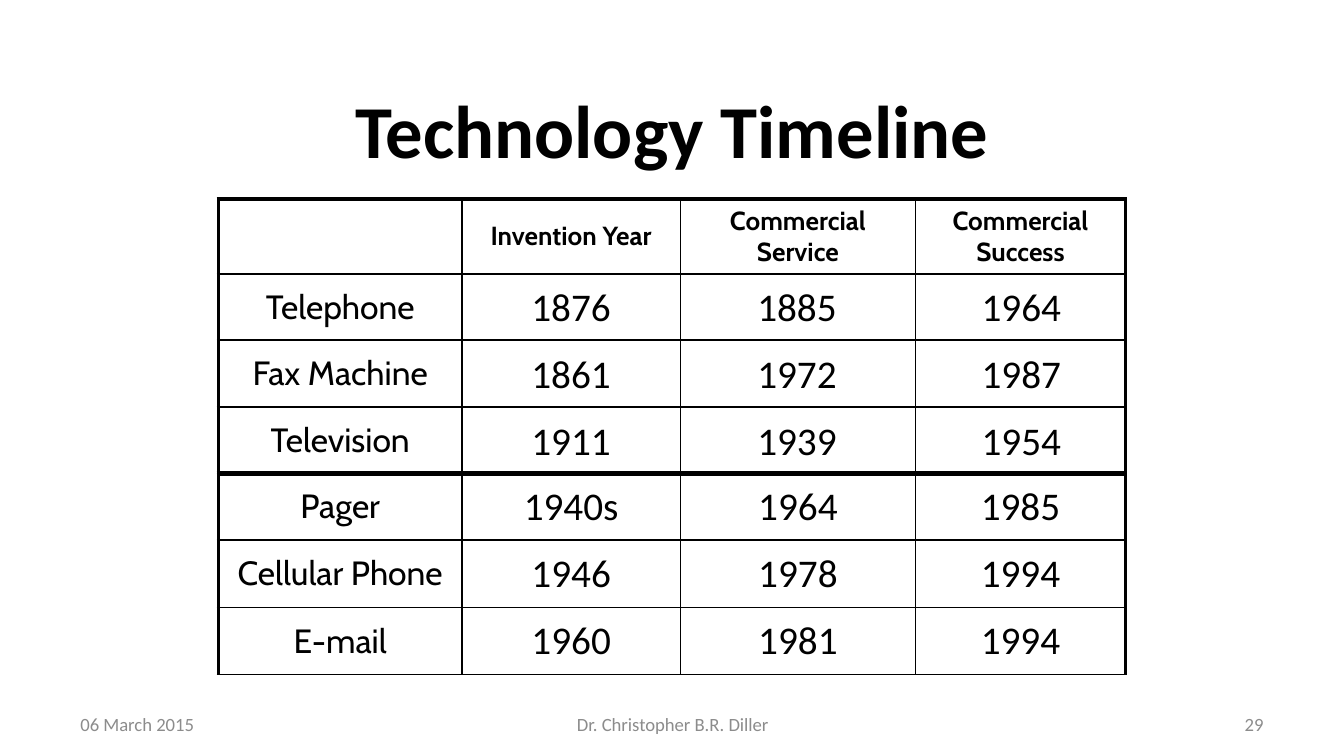
import pptx
import pptx.dml.color
import pptx.enum.text
import pptx.oxml.ns
import pptx.util
from lxml import etree
from pptx.util import Inches

ALIGN = pptx.enum.text.PP_ALIGN
ANCHOR = pptx.enum.text.MSO_ANCHOR
BLACK = "000000"
GRAY = "8C8C8C"
THIN, THICK = 1, 2.25
COLUMN_WIDTHS = [sixteenths / 16 for sixteenths in (29, 26, 28, 25)]
TABLE_LEFT = 26 / 16

HEADINGS = ["", "Invention Year", "Commercial\nService", "Commercial\nSuccess"]
EARLY = [
    ("Telephone", ["1876", "1885", "1964"]),
    ("Fax Machine", ["1861", "1972", "1987"]),
    ("Television", ["1911", "1939", "1954"]),
]
LATE = [
    ("Pager", ["1940s", "1964", "1985"]),
    ("Cellular Phone", ["1946", "1978", "1994"]),
    ("E-mail", ["1960", "1981", "1994"]),
]
YEAR_BOXES = [(3.5, 1.5), (5.12, 1.62), (6.88, 1.44)]

HEADING_FORMAT = dict(size=14, font="Cabin", bold=True)
LABEL_FORMAT = dict(size=18, font="Cabin")
YEAR_FORMAT = dict(size=21)


def rgb(color):
    return pptx.dml.color.RGBColor.from_string(color)


def write_text(frame, text, size=18, font="Calibri", color=BLACK, bold=False,
               align=ALIGN.CENTER):
    """Fill a text frame, one paragraph per line of text."""
    frame.text = text
    for paragraph in frame.paragraphs:
        paragraph.alignment = align
        paragraph.font.size = pptx.util.Pt(size)
        paragraph.font.name = font
        paragraph.font.bold = bold
        paragraph.font.color.rgb = rgb(color)


def set_borders(cell, **widths):
    """Draw the cell's borders; widths in points, keyed L, R, T, B in that order."""
    properties = cell._tc.get_or_add_tcPr()
    name = pptx.oxml.ns.qn
    for side, width in widths.items():
        line = etree.SubElement(properties, name(f"a:ln{side}"),
                                w=str(pptx.util.Pt(width)))
        fill = etree.SubElement(line, name("a:solidFill"))
        etree.SubElement(fill, name("a:srgbClr"), val=BLACK)


class SlideBuilder:
    def __init__(self, slide):
        self.slide = slide

    def text(self, left, top, width, height, text, anchor=ANCHOR.MIDDLE, **style):
        shape = self.slide.shapes.add_textbox(
            Inches(left), Inches(top), Inches(width), Inches(height))
        frame = shape.text_frame
        frame.word_wrap = True
        frame.vertical_anchor = anchor
        write_text(frame, text, **style)

    def table(self, top, row_heights, rows, bottom_width):
        """Add a table; each row is a list of (text, format) pairs."""
        shape = self.slide.shapes.add_table(
            len(rows), len(COLUMN_WIDTHS), Inches(TABLE_LEFT), Inches(top),
            Inches(sum(COLUMN_WIDTHS)), Inches(sum(row_heights)))
        table = shape.table
        table.first_row = table.horz_banding = False
        for column, width in zip(table.columns, COLUMN_WIDTHS):
            column.width = Inches(width)
        last_row, last_column = len(rows) - 1, len(COLUMN_WIDTHS) - 1
        for i, (row, height) in enumerate(zip(rows, row_heights)):
            table.rows[i].height = Inches(height)
            for j, (text, style) in enumerate(row):
                cell = table.cell(i, j)
                cell.margin_left = cell.margin_right = Inches(0.07)
                cell.margin_top = cell.margin_bottom = Inches(0.04)
                cell.vertical_anchor = ANCHOR.MIDDLE
                write_text(cell.text_frame, text, **style)
                set_borders(cell,
                            L=THICK if j == 0 else THIN,
                            R=THICK if j == last_column else THIN,
                            T=THICK if i == 0 else THIN,
                            B=bottom_width if i == last_row else THIN)
                cell.fill.background()


def main():
    presentation = pptx.Presentation()
    presentation.slide_width = Inches(10)
    presentation.slide_height = Inches(10 * 9 / 16)
    builder = SlideBuilder(
        presentation.slides.add_slide(presentation.slide_layouts[6]))

    builder.text(0.5, 0.6, 9, 0.71, "Technology Timeline", size=40, bold=True)

    early_rows = [[(heading, HEADING_FORMAT) for heading in HEADINGS]]
    early_rows += [[(label, LABEL_FORMAT)] + [("", LABEL_FORMAT)] * 3
                   for label, _ in EARLY]
    builder.table(1.48, [0.56, 0.49, 0.5, 0.5], early_rows, THICK)

    late_rows = [[(label, LABEL_FORMAT)] + [(year, YEAR_FORMAT) for year in years]
                 for label, years in LATE]
    builder.table(3.52, [0.5] * 3, late_rows, THIN)

    for i, (_, years) in enumerate(EARLY):
        for (left, width), year in zip(YEAR_BOXES, years):
            builder.text(left, 2.05 + 0.5 * i, width, 0.45, year,
                         anchor=ANCHOR.TOP, **YEAR_FORMAT)

    for left, width, text, align in [
        (0.5, 2.33, "06 March 2015", ALIGN.LEFT),
        (3.42, 3.17, "Dr. Christopher B.R. Diller", ALIGN.CENTER),
        (7.17, 2.33, "29", ALIGN.RIGHT),
    ]:
        builder.text(left, 5.29, width, 0.2, text, size=10, color=GRAY, align=align)

    presentation.save("out.pptx")


if __name__ == "__main__":
    main()
